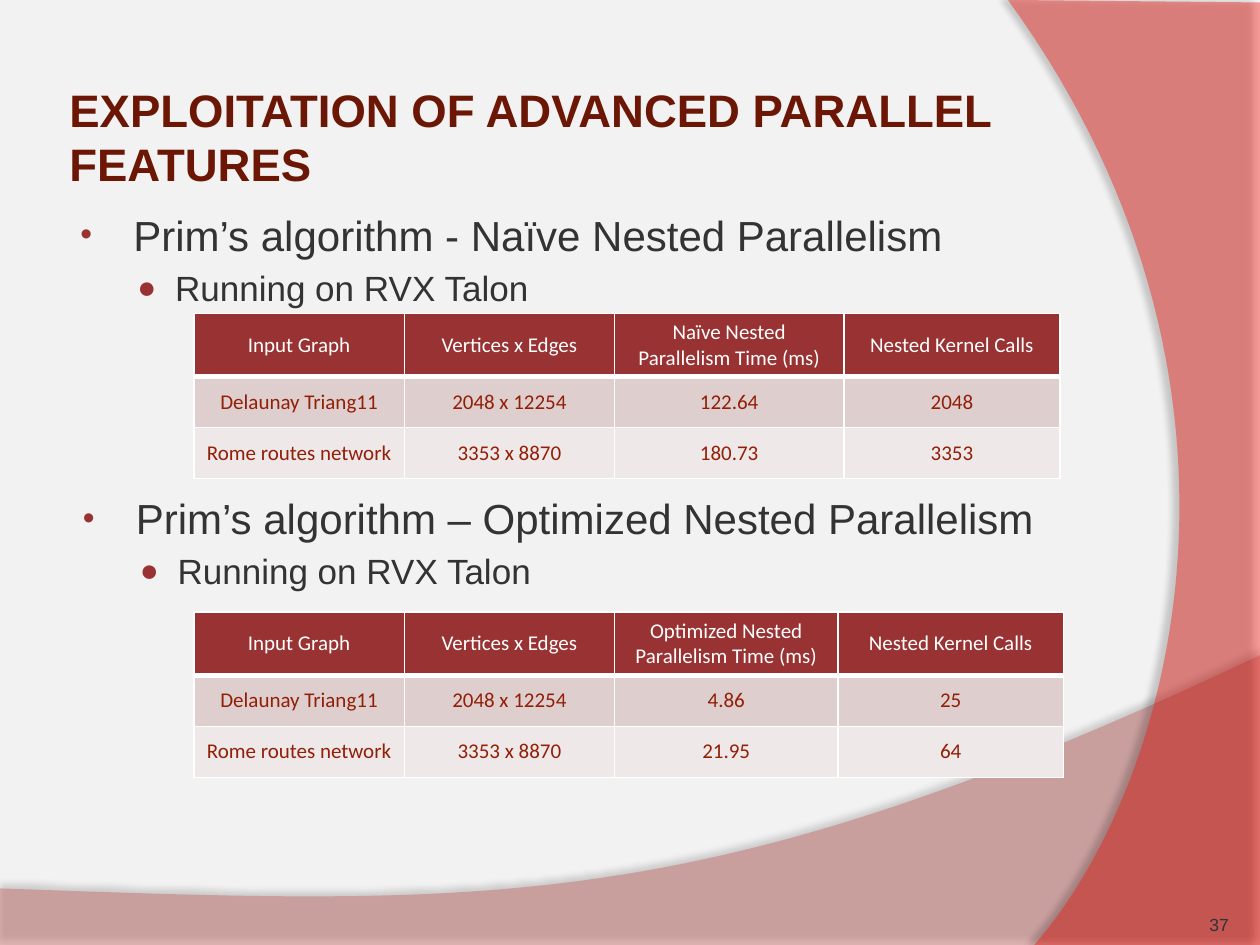
from lxml.etree import SubElement as Sub
from pptx import Presentation
from pptx.dml.color import RGBColor as Rgb
from pptx.enum.text import MSO_ANCHOR as Anchor, PP_ALIGN as Align
from pptx.oxml.ns import qn
from pptx.util import Cm, Pt

WIDE, HIGH = 25.4, 19.05
RED, DARK = "993232", "333333"
TITLE = "EXPLOITATION OF ADVANCED PARALLEL FEATURES"
NUMBER = "37"
DEVICE = "Running on RVX Talon"
GRAPHS = [("Delaunay Triang11", "2048 x 12254"), ("Rome routes network", "3353 x 8870")]
PARTS = [
    dict(head="Prim’s algorithm - Naïve Nested Parallelism", kind="Naïve",
         results=[("122.64", "2048"), ("180.73", "3353")],
         box=(1.27, 4.09, 20.75, 2.08), top=6.32, cols=(4.24, 4.24, 4.62, 4.36)),
    dict(head="Prim’s algorithm – Optimized Nested Parallelism", kind="Optimized",
         results=[("4.86", "25"), ("21.95", "64")],
         box=(1.32, 9.8, 21.34, 2.08), top=12.34, cols=(4.24, 4.24, 4.5, 4.55)),
]
LEVELS = [
    dict(size=24, left=1.17, hang=1.07, mark="•", scale=80, gap=0),
    dict(size=20, left=2.01, hang=0.76, mark="●", scale=90, gap=4),
]
ROWS = (1.27, 1.03, 1.03)
FILLS = (RED, "DECECE", "EFE8E8")
INKS = ("FFFFFF", "921F07", "921F07")
WAVES = [
    dict(curve=[(WIDE, 13.21), (14.2, 18.52), (9.93, 18.26), (0, 17.91)],
         rest=[(0, HIGH), (WIDE, HIGH)],
         fill="C76A66", alpha=45, shade=35, dist=3.5, turn=270),
    dict(curve=[(20.85, HIGH), (23.75, 15.72), (25.86, 7.62), (20.32, 0)],
         rest=[(WIDE, 0.05), (WIDE, HIGH)],
         fill="F61309", alpha=40, shade=45, dist=4, turn=180),
]


def rgb(code):
    return Rgb.from_string(code)


def add(node, tag, **attrs):
    return Sub(node, qn(tag), {key: str(val) for key, val in attrs.items()})


def bend(ends, steps=60):
    a, b, c, d = ends
    for i in range(steps + 1):
        t = i / steps
        u = 1 - t
        yield tuple(u**3 * a[k] + 3 * u * u * t * b[k] + 3 * u * t * t * c[k] + t**3 * d[k]
                    for k in (0, 1))


def draw_wave(slide, wave):
    spots = [(Cm(x), Cm(y)) for x, y in [*bend(wave["curve"]), *wave["rest"]]]
    pen = slide.shapes.build_freeform(*spots[0])
    pen.add_line_segments(spots[1:], close=True)
    shape = pen.convert_to_shape()
    shape.fill.solid()
    shape.fill.fore_color.rgb = rgb(wave["fill"])
    shape.line.fill.background()
    shape.shadow.inherit = False
    props = shape.element.spPr
    tint = props.find(qn("a:solidFill")).find(qn("a:srgbClr"))
    add(tint, "a:alpha", val=wave["alpha"] * 1000)
    glow = add(props.find(qn("a:effectLst")), "a:outerShdw", blurRad=Pt(4),
               dist=Pt(wave["dist"]), dir=wave["turn"] * 60000, rotWithShape=0)
    add(add(glow, "a:srgbClr", val="000000"), "a:alpha", val=wave["shade"] * 1000)


def style(para, size, ink, face="Arial", bold=False):
    font = para.font
    font.size, font.name, font.bold = Pt(size), face, bold
    font.color.rgb = rgb(ink)


def add_box(slide, box, inset, anchor):
    frame = slide.shapes.add_textbox(*map(Cm, box)).text_frame
    frame.word_wrap = True
    frame.vertical_anchor = anchor
    frame.margin_left = frame.margin_right = Cm(inset)
    frame.margin_top = frame.margin_bottom = Cm(inset / 2)
    return frame


def add_list(slide, part):
    frame = add_box(slide, part["box"], 0.25, Anchor.TOP)
    for i, (text, lvl) in enumerate(zip((part["head"], DEVICE), LEVELS)):
        para = frame.add_paragraph() if i else frame.paragraphs[0]
        para.text, para.level = text, i
        props = para._p.get_or_add_pPr()
        props.set("marL", str(Cm(lvl["left"])))
        props.set("indent", str(-Cm(lvl["hang"])))
        add(add(props, "a:buClr"), "a:srgbClr", val=RED)
        add(props, "a:buSzPct", val=lvl["scale"] * 1000)
        add(props, "a:buFont", typeface="Arial")
        add(props, "a:buChar", char=lvl["mark"])
        para.space_before = Pt(lvl["gap"])
        style(para, lvl["size"], DARK)


def edge(cell, row):
    props = cell._tc.get_or_add_tcPr()
    for side in "LRTB":
        thick = (row, side) in ((0, "B"), (1, "T"))
        line = add(props, f"a:ln{side}", w=Pt(3 if thick else 1))
        add(add(line, "a:solidFill"), "a:srgbClr", val="FFFFFF")


def add_grid(slide, part):
    heads = ("Input Graph", "Vertices x Edges",
             f"{part['kind']} Nested Parallelism Time (ms)", "Nested Kernel Calls")
    rows = [heads] + [g + r for g, r in zip(GRAPHS, part["results"])]
    cols = part["cols"]
    table = slide.shapes.add_table(len(rows), len(cols), Cm(3.91), Cm(part["top"]),
                                   Cm(sum(cols)), Cm(sum(ROWS))).table
    for col, wide in zip(table.columns, cols):
        col.width = Cm(wide)
    for r, row in enumerate(rows):
        table.rows[r].height = Cm(ROWS[r])
        for c, text in enumerate(row):
            cell = table.cell(r, c)
            cell.text = text
            cell.vertical_anchor = Anchor.MIDDLE
            edge(cell, r)
            cell.fill.solid()
            cell.fill.fore_color.rgb = rgb(FILLS[r])
            para = cell.text_frame.paragraphs[0]
            para.alignment = Align.CENTER
            style(para, 12, INKS[r], "Calibri")


def main():
    deck = Presentation()
    deck.slide_width, deck.slide_height = Cm(WIDE), Cm(HIGH)
    slide = deck.slides.add_slide(deck.slide_layouts[6])
    back = slide.background.fill
    back.solid()
    back.fore_color.rgb = rgb("F2F2F2")
    for wave in WAVES:
        draw_wave(slide, wave)
    para = add_box(slide, (1.27, 1.55, 20.75, 2.39), 0.13, Anchor.MIDDLE).paragraphs[0]
    para.text = TITLE
    style(para, 26, "6C1705", bold=True)
    for part in PARTS:
        add_list(slide, part)
        add_grid(slide, part)
    para = add_box(slide, (22.66, 17.83, 2.11, 1.02), 0, Anchor.BOTTOM).paragraphs[0]
    para.text, para.alignment = NUMBER, Align.RIGHT
    style(para, 10, DARK)
    deck.save("out.pptx")


if __name__ == "__main__":
    main()
